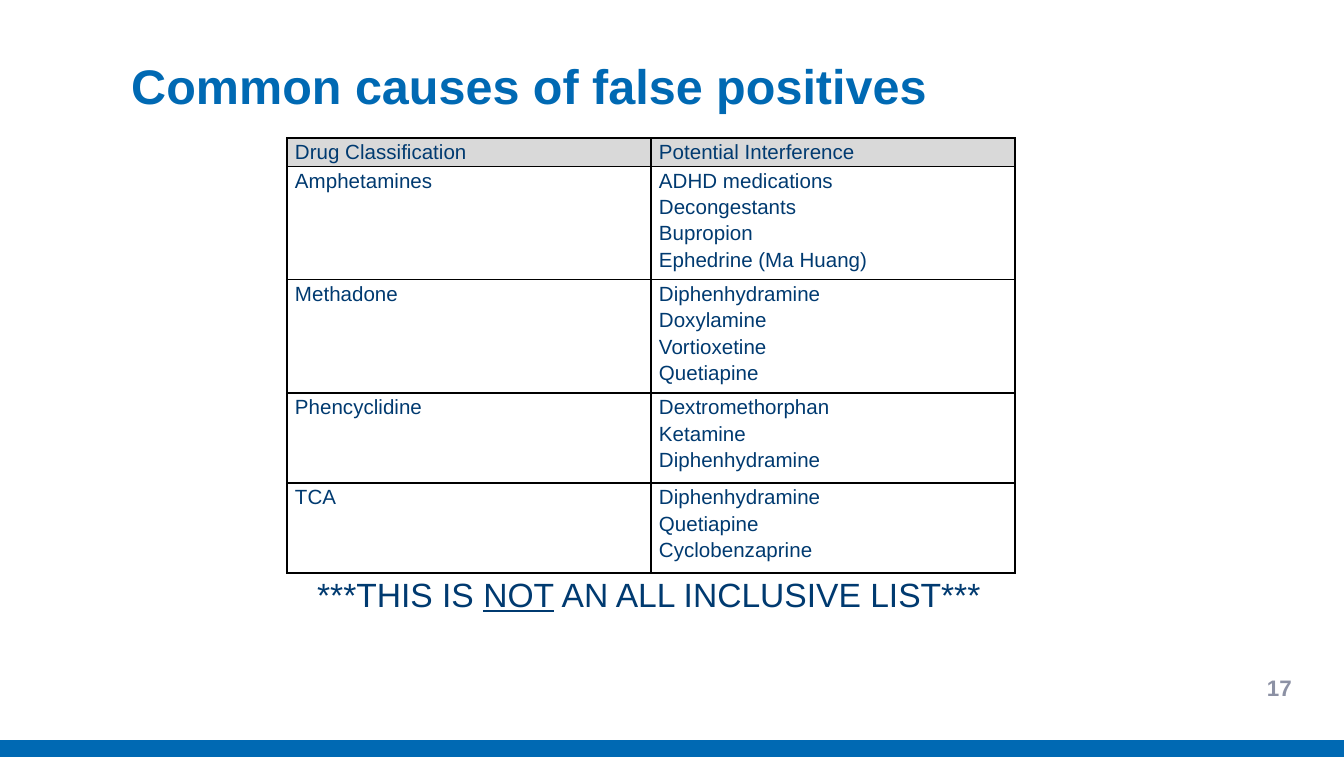
from lxml.etree import SubElement
from pptx import Presentation
from pptx.dml.color import RGBColor
from pptx.enum.shapes import MSO_SHAPE as Shape
from pptx.enum.text import MSO_ANCHOR as Anchor, PP_ALIGN as Align
from pptx.oxml.ns import qn
from pptx.util import Emu, Pt

BLUE, NAVY, GRAY, HEADER, BLACK = "0069B3", "003A70", "8C91A4", "D9D9D9", "000000"
WIDTH, HEIGHT = 1344, 757
INTERFERENCES = [
    ("Drug Classification", ["Potential Interference"]),
    ("Amphetamines", ["ADHD medications", "Decongestants", "Bupropion",
                      "Ephedrine (Ma Huang)"]),
    ("Methadone", ["Diphenhydramine", "Doxylamine", "Vortioxetine", "Quetiapine"]),
    ("Phencyclidine", ["Dextromethorphan", "Ketamine", "Diphenhydramine"]),
    ("TCA", ["Diphenhydramine", "Quetiapine", "Cyclobenzaprine"]),
]
ROW_HEIGHTS = [28, 105, 105, 90, 90]


def px(count):
    return Emu(round(count * 914400 / 134.4))


def color(value):
    return RGBColor.from_string(value)


class Slide:
    font = "Arial"

    def __init__(self, deck):
        self.page = deck.slides.add_slide(deck.slide_layouts[6])

    def bar(self, left, top, width, height, fill):
        bar = self.page.shapes.add_shape(Shape.RECTANGLE, *map(px, (left, top, width, height)))
        bar.shadow.inherit = False
        bar.fill.solid()
        bar.fill.fore_color.rgb = color(fill)
        bar.line.fill.background()

    def span(self, para, text, size, ink, bold=False, underline=False):
        span = para.add_run()
        span.text = text
        font = span.font
        font.name, font.size = self.font, Pt(size)
        font.bold, font.underline = bold, underline
        font.color.rgb = color(ink)

    def text(self, left, top, width, height, spans, size, ink, bold=False,
             align=Align.LEFT, anchor=Anchor.TOP):
        """Add one paragraph from (text, underlined) pairs."""
        box = self.page.shapes.add_textbox(*map(px, (left, top, width, height)))
        frame = box.text_frame
        frame.word_wrap = True
        frame.vertical_anchor = anchor
        para = frame.paragraphs[0]
        para.alignment = align
        for text, underline in spans:
            self.span(para, text, size, ink, bold, underline)

    def borders(self, cell):
        """Put a thin black line on all four sides, ahead of the cell fill."""
        properties = cell._tc.get_or_add_tcPr()
        for side in ("lnL", "lnR", "lnT", "lnB"):
            line = SubElement(properties, qn(f"a:{side}"), w=str(Pt(1)))
            fill = SubElement(line, qn("a:solidFill"))
            SubElement(fill, qn("a:srgbClr"), val=BLACK)

    def cell(self, cell, lines, fill):
        self.borders(cell)
        if fill:
            cell.fill.solid()
            cell.fill.fore_color.rgb = color(fill)
        else:
            cell.fill.background()
        cell.margin_left = cell.margin_right = px(8)
        cell.margin_top = cell.margin_bottom = 0
        frame = cell.text_frame
        for index, line in enumerate(lines):
            para = frame.add_paragraph() if index else frame.paragraphs[0]
            para.line_spacing = 1.15
            self.span(para, line, 11, NAVY)

    def table(self, left, top, width, rows, heights):
        frame = self.page.shapes.add_table(
            len(rows), 2, px(left), px(top), px(width), px(sum(heights)))
        table = frame.table
        table.horz_banding = False
        for column in table.columns:
            column.width = px(width // 2)
        for index, (drug, causes) in enumerate(rows):
            table.rows[index].height = px(heights[index])
            fill = None if index else HEADER
            self.cell(table.cell(index, 0), [drug], fill)
            self.cell(table.cell(index, 1), causes, fill)


def main():
    deck = Presentation()
    deck.slide_width, deck.slide_height = px(WIDTH), px(HEIGHT)
    slide = Slide(deck)
    slide.bar(0, 740, WIDTH, 17, BLUE)
    slide.text(118, 48, 1067, 73, [("Common causes of false positives", False)],
               26, BLUE, bold=True, anchor=Anchor.BOTTOM)
    slide.text(1206, 668, 99, 40, [("17", False)], 12, GRAY, bold=True,
               align=Align.RIGHT, anchor=Anchor.MIDDLE)
    slide.table(287, 138, 728, INTERFERENCES, ROW_HEIGHTS)
    slide.text(304, 567, 696, 54,
               [("***THIS IS ", False), ("NOT", True), (" AN ALL INCLUSIVE LIST***", False)],
               18, NAVY)
    deck.save("out.pptx")


if __name__ == "__main__":
    main()
